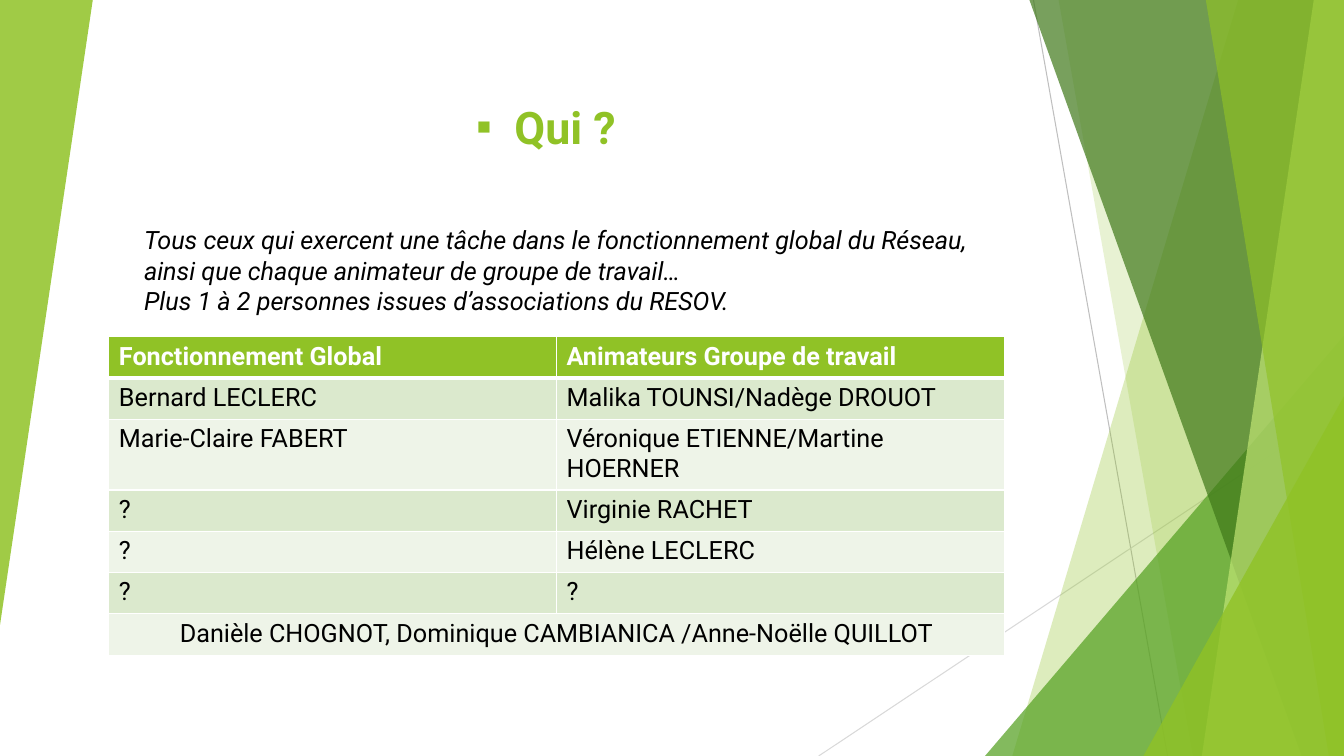
from lxml.etree import SubElement
from pptx import Presentation
from pptx.dml.color import RGBColor
from pptx.enum.shapes import MSO_CONNECTOR, MSO_SHAPE
from pptx.enum.text import MSO_ANCHOR, PP_ALIGN
from pptx.oxml.ns import qn
from pptx.util import Inches, Pt

WIDE, HIGH = 13.33, 7.5
FONT = "Roboto"
COLORS = {
    "lime": "90C226", "green": "54A021", "dark": "3F7819", "pale": "C0E474",
    "gray": "BFBFBF", "silver": "D9D9D9", "white": "FFFFFF", "black": "000000",
    "odd": "DBE9CD", "even": "EEF4E8",
}

TITLE = "Qui ?"
INTRO = [
    "Tous ceux qui exercent une tâche dans le fonctionnement global du Réseau, "
    "ainsi que chaque animateur de groupe de travail…",
    "Plus 1 à 2 personnes issues d’associations du RESOV.",
]
HEAD = ("Fonctionnement Global", "Animateurs Groupe de travail")
PEOPLE = [
    ("Bernard LECLERC", "Malika TOUNSI/Nadège DROUOT"),
    ("Marie-Claire FABERT", "Véronique ETIENNE/Martine HOERNER"),
    ("?", "Virginie RACHET"),
    ("?", "Hélène LECLERC"),
    ("?", "?"),
]
LAST = "Danièle CHOGNOT, Dominique CAMBIANICA /Anne-Noëlle QUILLOT"

# start x, start y, end x, end y, color
LINES = [(10.25, 0, 11.58, HIGH, "gray"), (WIDE, 4.03, 8.12, HIGH, "silver")]
# Back to front: bands give top x and bottom x, wedges give left, top, width,
# height and turn; then color and opacity in percent
DECOR = [
    ((12.28, 10.04), "lime", 30),
    ((10.5, 11.83), "lime", 20),
    ((9.77, 3.33, 3.56, 4.17, 0), "green", 72),
    ((10.21, 12.91), "dark", 70),
    ((13.03, 11.92), "pale", 70),
    ((11.96, 13.18), "lime", 65),
    ((11.34, 3.93, 1.99, 3.57, 0), "lime", 80),
    ((0, 0, 0.92, 6.2, 180), "lime", 85),
]


def rgb(name):
    return RGBColor.from_string(COLORS[name])


def style(para, size, color, bold=False, italic=False):
    for run in para.runs:
        font = run.font
        font.name, font.size = FONT, Pt(size)
        font.bold, font.italic = bold, italic
        font.color.rgb = rgb(color)


def paint(shape, color, alpha):
    shape.shadow.inherit = False
    shape.fill.solid()
    shape.fill.fore_color.rgb = rgb(color)
    shape.line.fill.background()
    tone = shape.fill._xPr.find(".//" + qn("a:srgbClr"))
    SubElement(tone, qn("a:alpha"), val=str(alpha * 1000))


def add_line(shapes, x1, y1, x2, y2, color):
    line = shapes.add_connector(
        MSO_CONNECTOR.STRAIGHT, Inches(x1), Inches(y1), Inches(x2), Inches(y2))
    line.line.color.rgb = rgb(color)
    line.line.width = Pt(0.75)
    SubElement(line._element.spPr, qn("a:effectLst"))


def add_band(shapes, top, base):
    """Add a slanted area that reaches the right edge of the slide."""
    pen = shapes.build_freeform(Inches(top), 0, scale=1.0)
    rest = [(WIDE, 0), (WIDE, HIGH), (base, HIGH)]
    pen.add_line_segments([(Inches(x), Inches(y)) for x, y in rest], close=True)
    return pen.convert_to_shape()


def add_wedge(shapes, left, top, width, height, turn):
    wedge = shapes.add_shape(
        MSO_SHAPE.ISOSCELES_TRIANGLE,
        Inches(left), Inches(top), Inches(width), Inches(height))
    wedge.adjustments[0] = 1
    wedge.rotation = turn
    return wedge


def fill_title(title):
    title.left, title.top = Inches(1.08), Inches(0.46)
    title.width, title.height = Inches(8.67), Inches(1.11)
    frame = title.text_frame
    frame.text = TITLE
    frame.vertical_anchor = MSO_ANCHOR.BOTTOM
    para = frame.paragraphs[0]
    para.alignment = PP_ALIGN.CENTER
    style(para, 32, "lime", bold=True)
    props = para._p.get_or_add_pPr()
    props.set("marL", str(Inches(0.38)))
    props.set("indent", str(Inches(-0.38)))
    SubElement(props, qn("a:buFont"), typeface="Arial")
    SubElement(props, qn("a:buChar"), char="▪")


def add_intro(shapes):
    box = shapes.add_textbox(
        Inches(1.33), Inches(2.18), Inches(8.49), Inches(1))
    frame = box.text_frame
    frame.word_wrap = True
    frame.text = "\n".join(INTRO)
    for para in frame.paragraphs:
        style(para, 18, "black", italic=True)


def set_cell(cell, text, fill, color="black", bold=False, base=1):
    cell.text = text
    style(cell.text_frame.paragraphs[0], 18, color, bold=bold)
    props = cell._tc.get_or_add_tcPr()
    for side, width in (("L", 1), ("R", 1), ("T", 1), ("B", base)):
        edge = SubElement(props, qn("a:ln" + side), w=str(Pt(width)))
        paper = SubElement(edge, qn("a:solidFill"))
        SubElement(paper, qn("a:srgbClr"), val=COLORS["white"])
    cell.fill.solid()
    cell.fill.fore_color.rgb = rgb(fill)


def add_people(shapes):
    rows = [HEAD, *PEOPLE, (LAST, "")]
    table = shapes.add_table(
        len(rows), 2, Inches(1.08), Inches(3.34),
        Inches(8.88), Inches(0.41 * len(rows))).table
    for r, row in enumerate(rows):
        table.rows[r].height = Inches(0.41)
        for c, text in enumerate(row):
            cell = table.cell(r, c)
            if r == 0:
                set_cell(cell, text, "lime", "white", bold=True, base=3)
            else:
                set_cell(cell, text, "odd" if r % 2 else "even")
    table.rows[2].height = Inches(0.7)
    end = len(rows) - 1
    table.cell(end, 0).merge(table.cell(end, 1))
    table.cell(end, 0).text_frame.paragraphs[0].alignment = PP_ALIGN.CENTER


def main():
    deck = Presentation()
    deck.slide_width, deck.slide_height = Inches(WIDE), Inches(HIGH)
    slide = deck.slides.add_slide(deck.slide_layouts[5])
    shapes = slide.shapes
    for line in LINES:
        add_line(shapes, *line)
    for place, color, alpha in DECOR:
        draw = add_band if len(place) == 2 else add_wedge
        paint(draw(shapes, *place), color, alpha)
    fill_title(shapes.title)
    add_intro(shapes)
    add_people(shapes)
    deck.save("out.pptx")


if __name__ == "__main__":
    main()
